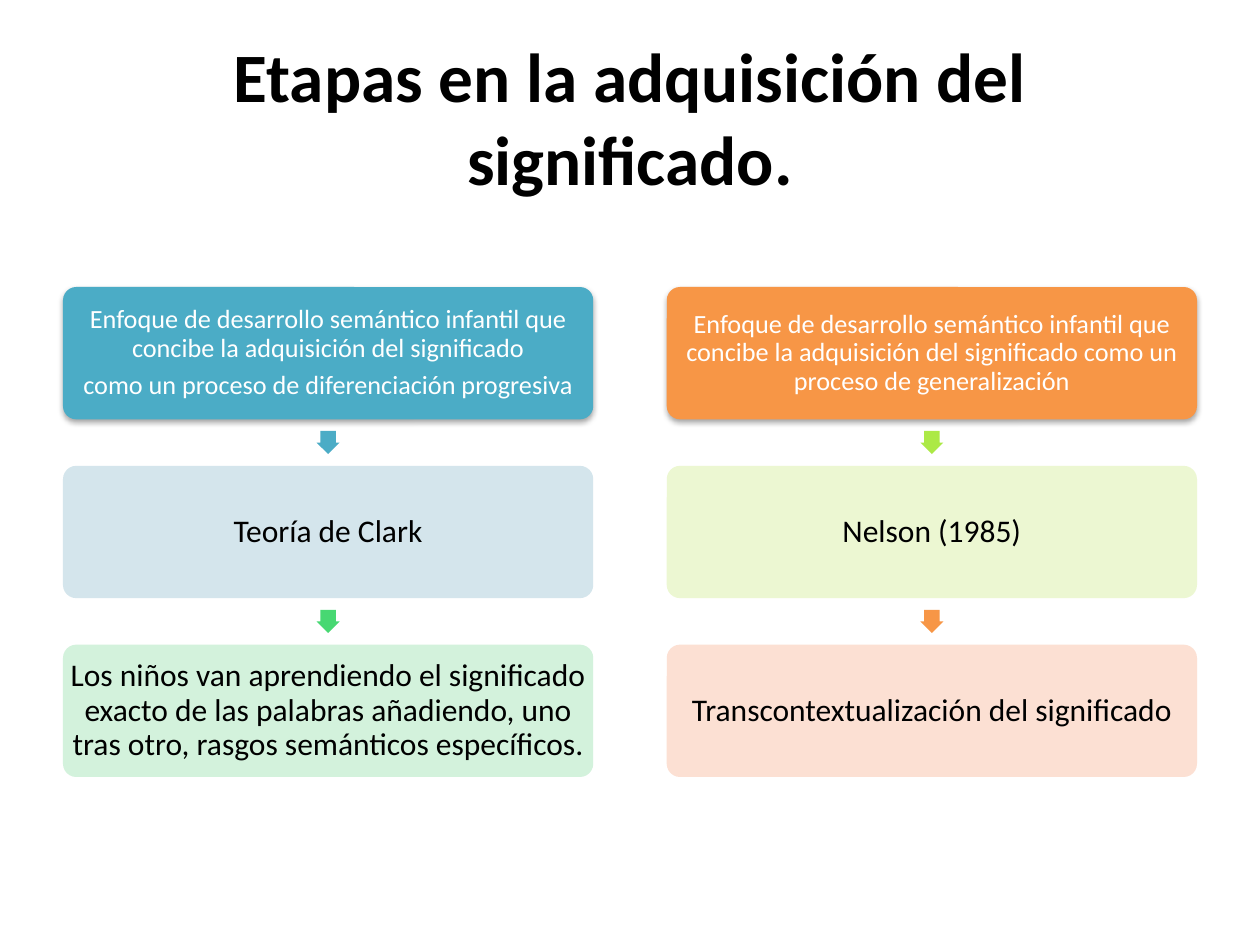
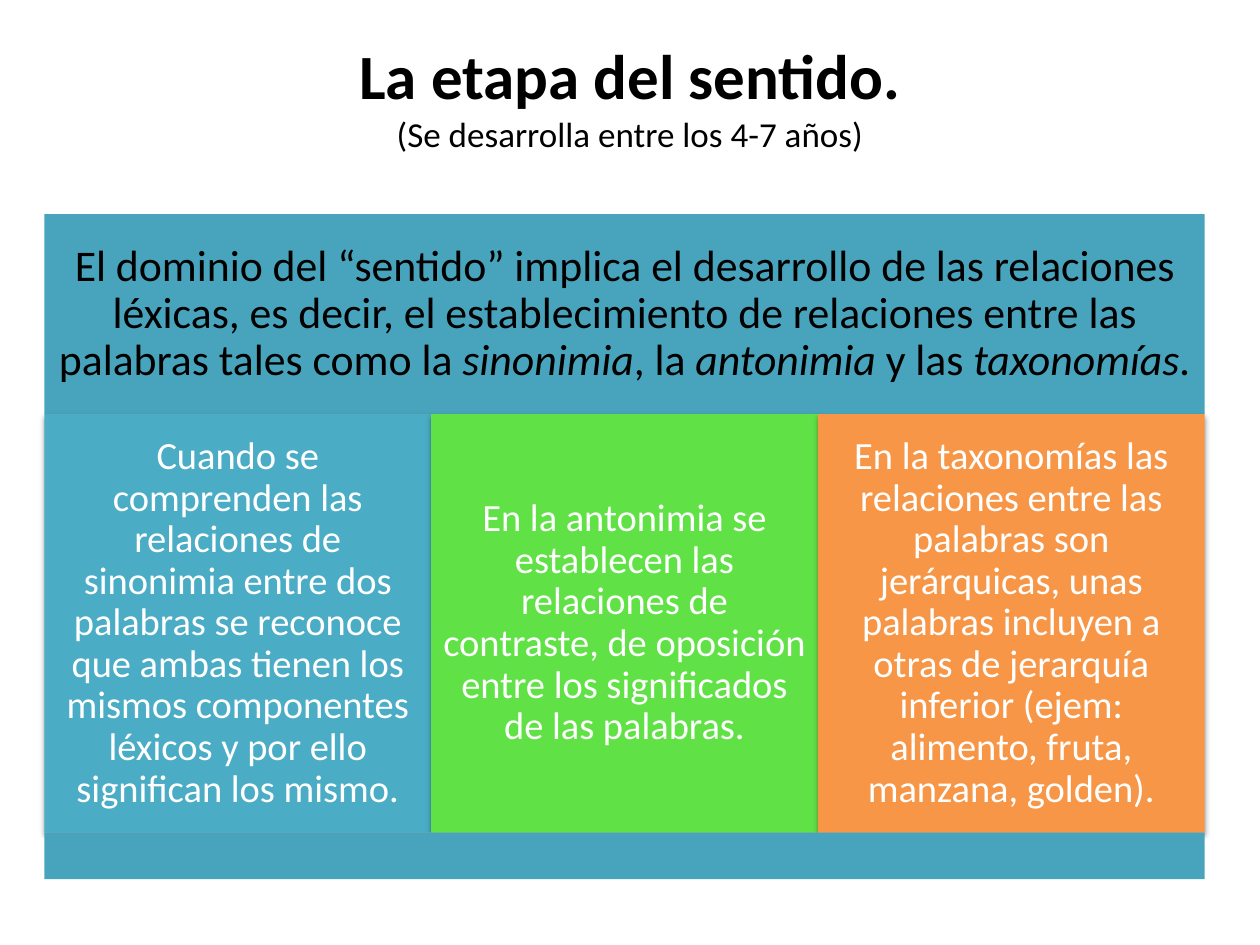
import pptx
import pptx.dml.color
import pptx.enum.shapes
import pptx.enum.text
import pptx.oxml
import pptx.oxml.ns
import pptx.util

Pt = pptx.util.Pt
RGB = pptx.dml.color.RGBColor
Shape = pptx.enum.shapes.MSO_SHAPE
MIDDLE = pptx.enum.text.MSO_ANCHOR.MIDDLE
CENTER = pptx.enum.text.PP_ALIGN.CENTER

BLACK = RGB(0x00, 0x00, 0x00)
WHITE = RGB(0xFF, 0xFF, 0xFF)
BLUE = RGB(0x4B, 0xAC, 0xC6)
ORANGE = RGB(0xF7, 0x96, 0x46)
GREEN = RGB(0x60, 0xE1, 0x46)
MINT = RGB(0x47, 0xD8, 0x72)
LIME = RGB(0xAC, 0xE9, 0x46)
TEAL = RGB(0x48, 0xA4, 0xBD)
PALE_BLUE = RGB(0xD0, 0xE3, 0xEA)
PALE_MINT = RGB(0xCF, 0xF1, 0xD9)
PALE_LIME = RGB(0xEB, 0xF7, 0xCE)
PALE_PEACH = RGB(0xFC, 0xDD, 0xCF)

SHADOW = (
    '<a:outerShdw %s blurRad="40000" dist="23000" dir="5400000" rotWithShape="0">'
    '<a:srgbClr val="000000"><a:alpha val="35000"/></a:srgbClr></a:outerShdw>'
    % pptx.oxml.ns.nsdecls("a")
)
ALPHA = '<a:alpha %s val="90000"/>' % pptx.oxml.ns.nsdecls("a")


class Deck:
    font = "Calibri"

    def __init__(self):
        self.show = pptx.Presentation()
        self.show.slide_width = Pt(720)
        self.show.slide_height = Pt(540)
        self.slide = None

    def page(self):
        self.slide = self.show.slides.add_slide(self.show.slide_layouts[5])

    def run(self, para, text, size, color=BLACK, bold=False, italic=False):
        run = para.add_run()
        run.text = text
        run.font.name = self.font
        run.font.size = Pt(size)
        run.font.color.rgb = color
        run.font.bold = bold
        run.font.italic = italic

    def title(self, top, text, size, note=None):
        box = self.slide.shapes.title
        box.left, box.top, box.width, box.height = Pt(36), Pt(top), Pt(648), Pt(90)
        frame = box.text_frame
        frame.auto_size = pptx.enum.text.MSO_AUTO_SIZE.NONE
        frame.vertical_anchor = MIDDLE
        para = frame.paragraphs[0]
        para.alignment = CENTER
        self.run(para, text, size, bold=True)
        if note:
            para.add_line_break()
            self.run(para, note, 20)

    def shape(self, kind, left, top, width, height, fill, raised=False, sheer=False):
        shape = self.slide.shapes.add_shape(kind, Pt(left), Pt(top), Pt(width), Pt(height))
        shape.shadow.inherit = False
        shape.fill.solid()
        shape.fill.fore_color.rgb = fill
        shape.line.fill.background()
        props = shape._element.spPr
        if raised:
            props.find(pptx.oxml.ns.qn("a:effectLst")).append(pptx.oxml.parse_xml(SHADOW))
        if sheer:
            tint = props.find(".//" + pptx.oxml.ns.qn("a:srgbClr"))
            tint.append(pptx.oxml.parse_xml(ALPHA))
        return shape

    def label(self, shape, paras, size, color, inset):
        frame = shape.text_frame
        frame.word_wrap = True
        frame.vertical_anchor = MIDDLE
        frame.margin_left = frame.margin_right = Pt(inset)
        frame.margin_top = frame.margin_bottom = Pt(inset)
        for index, parts in enumerate(paras):
            para = frame.add_paragraph() if index else frame.paragraphs[0]
            para.alignment = CENTER
            para.line_spacing = 0.9
            para.space_after = Pt(size * 0.35)
            for spot, text in enumerate(parts):
                self.run(para, text, size, color, italic=spot % 2 == 1)

    def card(self, left, top, width, height, fill, paras, head):
        card = self.shape(Shape.ROUNDED_RECTANGLE, left, top, width, height, fill,
                          raised=head, sheer=not head)
        card.adjustments[0] = 0.1
        if head:
            self.label(card, paras, 15, WHITE, 1.5)
        else:
            self.label(card, paras, 18, BLACK, 1.8)

    def arrow(self, left, top, side, fill):
        arrow = self.shape(Shape.DOWN_ARROW, left, top, side, side, fill)
        arrow.adjustments[0] = 0.67
        arrow.adjustments[1] = 0.5

    def block(self, left, top, width, height, fill, paras, size, color, inset, raised=False):
        block = self.shape(Shape.RECTANGLE, left, top, width, height, fill, raised)
        self.label(block, paras, size, color, inset)


def stages(deck):
    deck.page()
    deck.title(21.6, "Etapas en la adquisición del significado.", 39.6)
    wide, high, gap, side = 303, 75.6, 26.6, 13.2
    lanes = [
        [
            (BLUE, [["Enfoque de desarrollo semántico infantil que concibe "
                     "la adquisición del significado"],
                    ["como un proceso de diferenciación progresiva"]], BLUE),
            (PALE_BLUE, [["Teoría de Clark"]], MINT),
            (PALE_MINT, [["Los niños van aprendiendo el significado exacto de las palabras "
                          "añadiendo, uno tras otro, rasgos semánticos específicos."]], None),
        ],
        [
            (ORANGE, [["Enfoque de desarrollo semántico infantil que concibe la adquisición "
                       "del significado como un proceso de generalización"]], LIME),
            (PALE_LIME, [["Nelson (1985)"]], ORANGE),
            (PALE_PEACH, [["Transcontextualización del significado"]], None),
        ],
    ]
    for col, lane in enumerate(lanes):
        left = 36 + col * 345
        for row, (fill, paras, tip) in enumerate(lane):
            top = 164 + row * (high + gap)
            deck.card(left, top, wide, high, fill, paras, head=row == 0)
            if tip:
                deck.arrow(left + (wide - side) / 2, top + high + (gap - side) / 2, side, tip)


def senses(deck):
    deck.page()
    deck.title(9.4, "La etapa del sentido.", 36, "(Se desarrolla entre los 4-7 años)")
    left, top, wide = 25.4, 122.4, 663
    band, body, foot = 114.2, 239.2, 26.6
    intro = [
        "El dominio del “sentido” implica el desarrollo de las relaciones léxicas, es decir, "
        "el establecimiento de relaciones entre las palabras tales como la ",
        "sinonimia", ", la ", "antonimia ", "y las ", "taxonomías", ".",
    ]
    deck.block(left, top, wide, band, TEAL, [intro], 25, BLACK, 7)
    terms = [
        (BLUE, "Cuando se comprenden las relaciones de sinonimia entre dos palabras se reconoce "
               "que ambas tienen los mismos componentes léxicos y por ello significan los mismo."),
        (GREEN, "En la antonimia se establecen las relaciones de contraste, de oposición "
                "entre los significados de las palabras."),
        (ORANGE, "En la taxonomías las relaciones entre las palabras son jerárquicas, unas "
                 "palabras incluyen a otras de jerarquía inferior (ejem: alimento, fruta, "
                 "manzana, golden)."),
    ]
    part = wide / len(terms)
    for col, (fill, text) in enumerate(terms):
        deck.block(left + col * part, top + band, part, body, fill, [[text]],
                   22, WHITE, 6.2, raised=True)
    deck.shape(Shape.RECTANGLE, left, top + band + body, wide, foot, TEAL)


def main():
    deck = Deck()
    stages(deck)
    senses(deck)
    deck.show.save("out.pptx")


if __name__ == "__main__":
    main()
